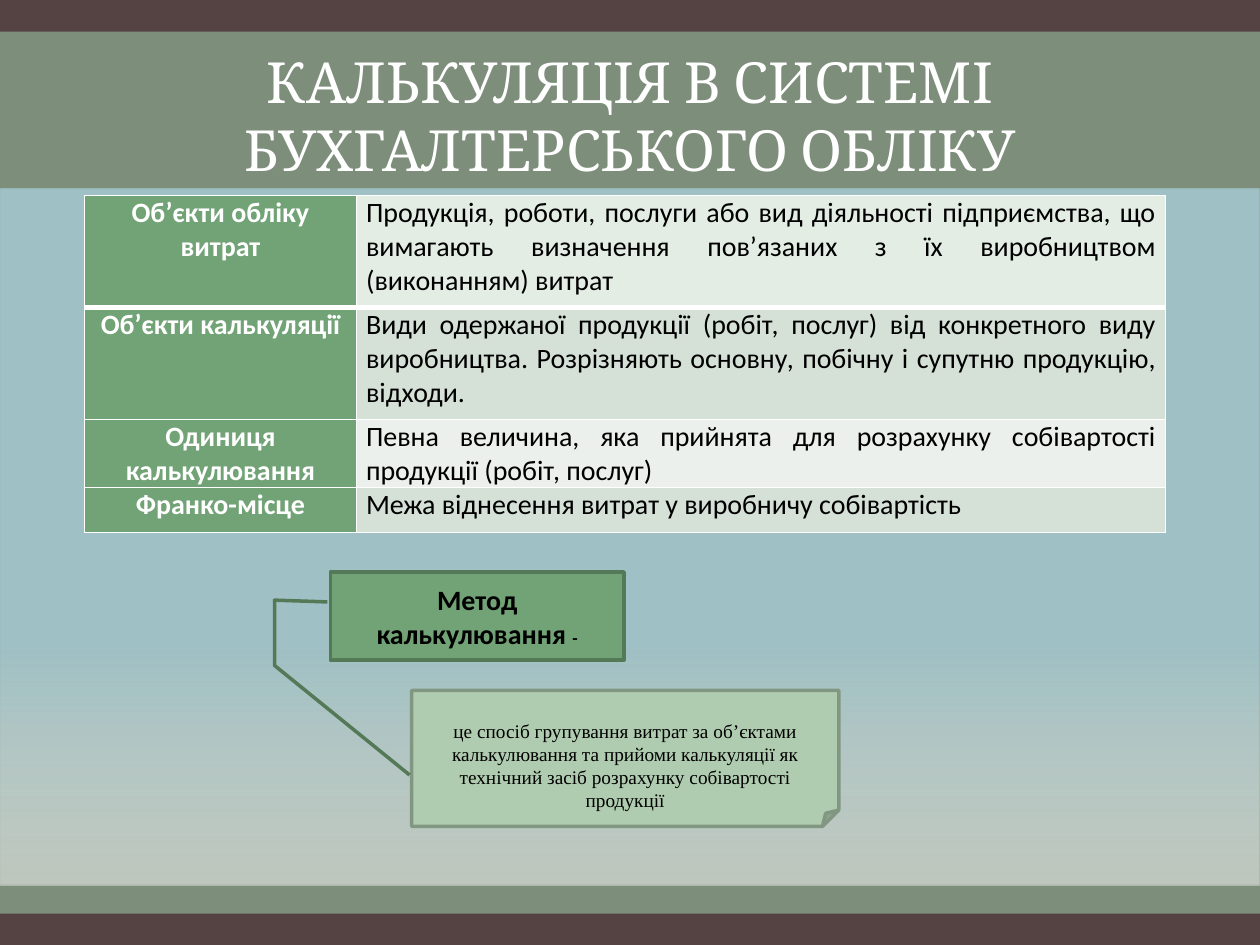
"""Build the slide on costing within the accounting system."""
from lxml.etree import SubElement
from pptx import Presentation
from pptx.dml.color import RGBColor
from pptx.enum.shapes import MSO_SHAPE as Shape
from pptx.enum.text import MSO_ANCHOR as Anchor, PP_ALIGN as Align
from pptx.oxml.ns import qn
from pptx.util import Cm, Pt

COLORS = {
    "frame": "554343", "band": "829782", "sky": "A8CDD7", "white": "FFFFFF",
    "black": "000000", "green": "72A376", "dark_green": "547957", "note": "B0CCB0",
}
TITLE = "КАЛЬКУЛЯЦІЯ В СИСТЕМІ БУХГАЛТЕРСЬКОГО ОБЛІКУ"
ROWS = [
    ("Об’єкти обліку витрат",
     "Продукція, роботи, послуги або вид діяльності підприємства, що вимагають "
     "визначення пов’язаних з їх виробництвом (виконанням) витрат", 2.26, "E3EDE4"),
    ("Об’єкти калькуляції",
     "Види одержаної продукції (робіт, послуг) від конкретного виду виробництва. "
     "Розрізняють основну, побічну і супутню продукцію, відходи.", 2.26, "D5E0D6"),
    ("Одиниця калькулювання",
     "Певна величина, яка прийнята для розрахунку собівартості продукції "
     "(робіт, послуг)", 1.37, "EBF0EC"),
    ("Франко-місце", "Межа віднесення витрат у виробничу собівартість", 0.91, "D5E0D6"),
]
COLUMN_WIDTHS = (5.49, 16.31)
METHOD = [("Метод калькулювання ", 16), ("-", 10)]
CALLOUT_POINTS = {
    f"adj{number}": value for number, value in
    enumerate((0.34, -0.01, 0.32, -0.19, 1.06, -0.19, 2.3, 0.27), start=1)
}
NOTE_FOLD = {"adj": 0.12}
DEFINITION = ("це спосіб групування витрат за об’єктами калькулювання та прийоми "
              "калькуляції як технічний засіб розрахунку собівартості продукції")


def rgb(name):
    return RGBColor.from_string(COLORS.get(name, name))


def set_alpha(color_node, percent):
    SubElement(color_node, qn("a:alpha")).set("val", str(percent * 1000))


def set_guides(box, guides):
    guide_list = next(box._element.iter(qn("a:avLst")))
    for guide in list(guide_list):
        guide_list.remove(guide)
    for name, value in guides.items():
        SubElement(guide_list, qn("a:gd"), name=name, fmla=f"val {round(value * 100000)}")


def style(span, font, size, color, bold=False):
    span.font.name, span.font.size, span.font.bold = font, Pt(size), bold
    span.font.color.rgb = rgb(color)


def add_box(slide, kind, bounds, fill, line=None):
    box = slide.shapes.add_shape(kind, *map(Cm, bounds))
    box.shadow.inherit = False
    box.fill.solid()
    box.fill.fore_color.rgb = rgb(fill)
    if line:
        box.line.color.rgb = rgb(line)
        box.line.width = Pt(2)
    else:
        box.line.fill.background()
    return box


def add_background(slide):
    add_box(slide, Shape.RECTANGLE, (0, 0, 25.4, 19.05), "frame")
    band = add_box(slide, Shape.RECTANGLE, (0, 0.64, 25.4, 17.78), "band")
    set_alpha(next(band._element.spPr.iter(qn("a:srgbClr"))), 90)
    panel = add_box(slide, Shape.RECTANGLE, (0, 3.81, 25.4, 14.05), "sky")
    panel.fill.gradient()
    panel.fill.gradient_angle = 270
    stops = [(0.66, "sky", 79), (1, "white", 50)]
    for stop, (position, color, _) in zip(panel.fill.gradient_stops, stops):
        stop.position = position
        stop.color.rgb = rgb(color)
    color_nodes = panel._element.spPr.iter(qn("a:srgbClr"))
    for node, (_, _, alpha) in zip(list(color_nodes), stops):
        set_alpha(node, alpha)


def add_title(slide):
    box = slide.shapes.add_textbox(Cm(1.27), Cm(0.64), Cm(22.86), Cm(3.17))
    frame = box.text_frame
    frame.word_wrap, frame.vertical_anchor = True, Anchor.BOTTOM
    frame.text = TITLE
    para = frame.paragraphs[0]
    para.alignment = Align.CENTER
    style(para.runs[0], "Cambria", 32.4, "white")


def set_borders(cell, row):
    widths = {"L": 1, "R": 1, "T": 3 if row == 1 else 1, "B": 3 if row == 0 else 1}
    for side, width in widths.items():
        line = SubElement(cell._tc.get_or_add_tcPr(), qn(f"a:ln{side}"), w=str(Pt(width)))
        fill = SubElement(line, qn("a:solidFill"))
        SubElement(fill, qn("a:srgbClr"), val=COLORS["white"])


def add_terms_table(slide):
    heights = [height for _, _, height, _ in ROWS]
    table = slide.shapes.add_table(
        len(ROWS), len(COLUMN_WIDTHS), Cm(1.7), Cm(3.94),
        Cm(sum(COLUMN_WIDTHS)), Cm(sum(heights))).table
    for column, width in zip(table.columns, COLUMN_WIDTHS):
        column.width = Cm(width)
    for index, (term, meaning, height, tint) in enumerate(ROWS):
        table.rows[index].height = Cm(height)
        looks = [(term, "green", "white", True, Align.CENTER),
                 (meaning, tint, "black", False, Align.JUSTIFY)]
        for cell, (text, fill, color, bold, align) in zip(table.rows[index].cells, looks):
            cell.margin_left = cell.margin_right = Cm(0.19)
            cell.margin_top = cell.margin_bottom = 0
            set_borders(cell, index)
            cell.fill.solid()
            cell.fill.fore_color.rgb = rgb(fill)
            cell.text_frame.text = text
            para = cell.text_frame.paragraphs[0]
            para.alignment = align
            style(para.runs[0], "Calibri", 16, color, bold)


def add_definition(slide):
    box = add_box(slide, Shape.FOLDED_CORNER, (8.3, 13.92, 8.61, 2.74), "note", "band")
    set_guides(box, NOTE_FOLD)
    frame = box.text_frame
    frame.word_wrap, frame.vertical_anchor = True, Anchor.TOP
    frame.margin_top = Cm(0.58)
    frame.text = DEFINITION
    para = frame.paragraphs[0]
    para.alignment = Align.CENTER
    style(para.runs[0], "Times New Roman", 11, "black")


def add_method(slide):
    box = add_box(slide, Shape.LINE_CALLOUT_3, (6.66, 11.53, 5.92, 1.78), "green", "dark_green")
    set_guides(box, CALLOUT_POINTS)
    box.text_frame.word_wrap = True
    box.text_frame.vertical_anchor = Anchor.MIDDLE
    para = box.text_frame.paragraphs[0]
    para.alignment = Align.CENTER
    for text, size in METHOD:
        span = para.add_run()
        span.text = text
        style(span, "Calibri", size, "black", True)


def main():
    deck = Presentation()
    deck.slide_width, deck.slide_height = Cm(25.4), Cm(19.05)
    slide = deck.slides.add_slide(deck.slide_layouts[6])
    add_background(slide)
    add_title(slide)
    add_terms_table(slide)
    add_definition(slide)
    add_method(slide)
    deck.save("out.pptx")


if __name__ == "__main__":
    main()
